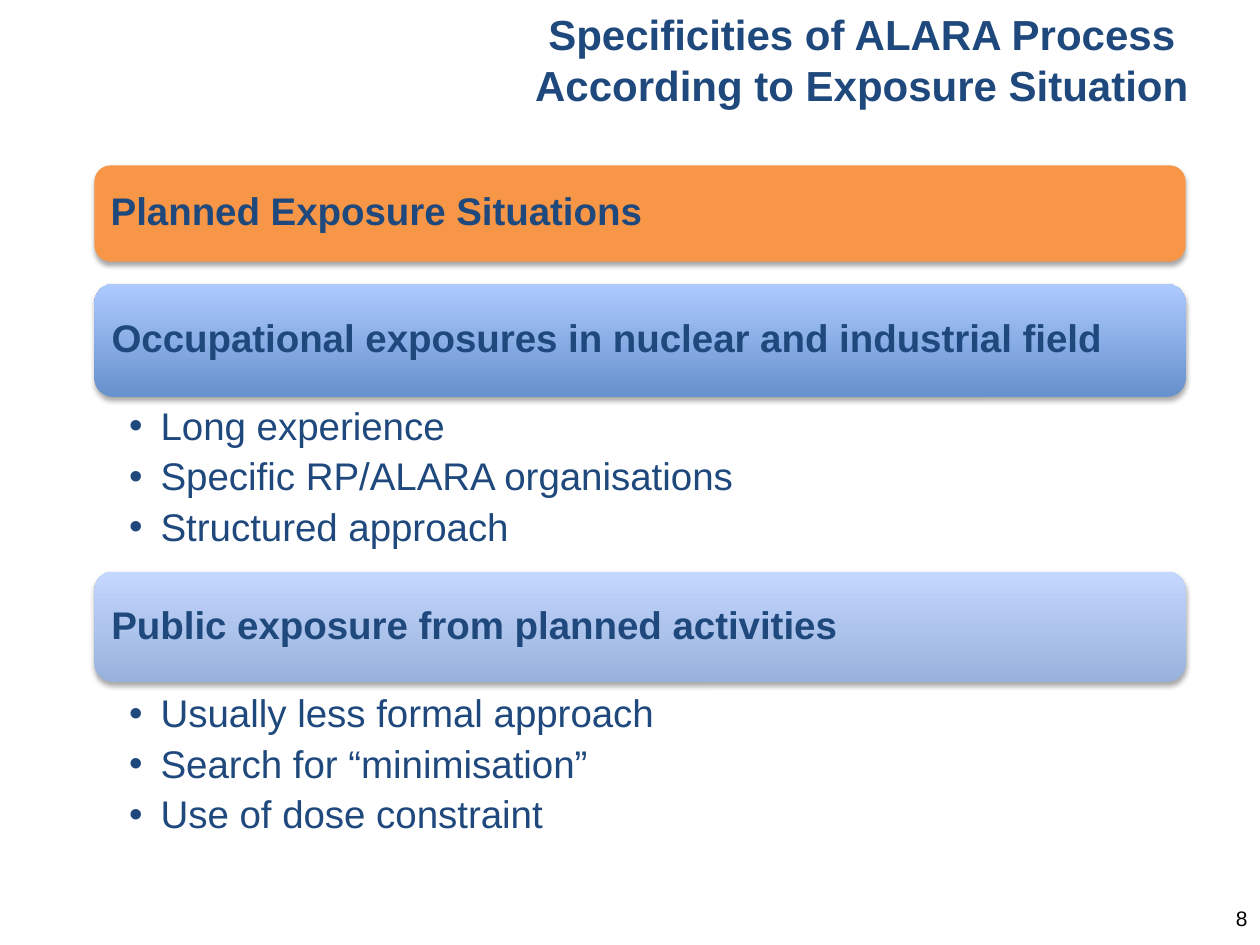
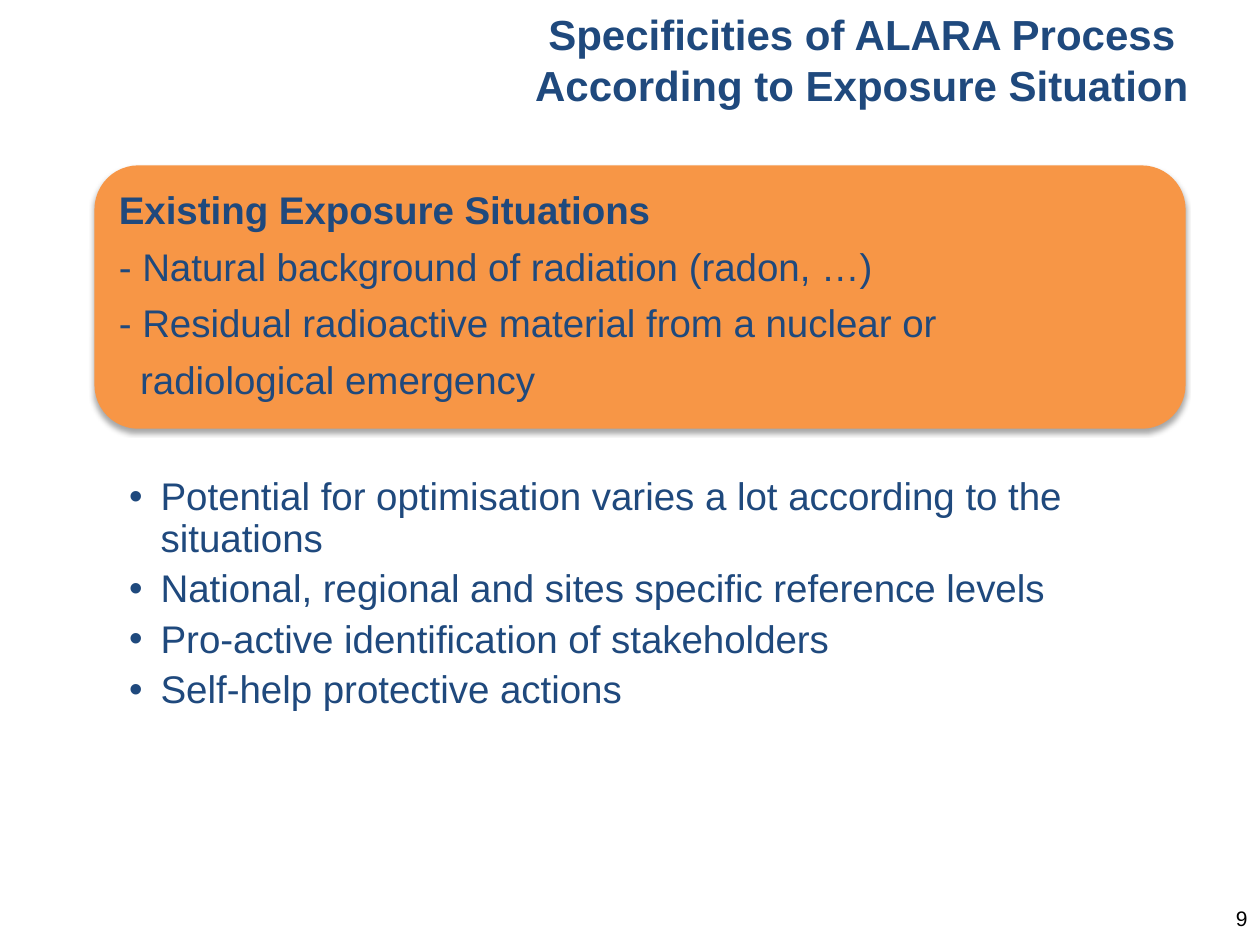
"""Build two slides on the ALARA process in different exposure situations."""
from lxml import etree
from pptx import Presentation
from pptx.dml.color import RGBColor
from pptx.enum import shapes, text
from pptx.oxml import ns
from pptx.util import Pt

NAVY, ORANGE, BLACK = "1F497D", "F79646", "000000"
BLUE, PALE_BLUE = ("6791CD", "ADCAFF"), ("9AB2DB", "C3D7FF")
TITLE = "Specificities of ALARA Process According to Exposure Situation"
LEFT, WIDTH = 54, 623.5
HEADING = dict(bold=True, after=8.6, line=0.9)
DETAIL = dict(after=8.6, line=0.9)
BULLET = dict(after=5.1, line=0.9, indent=18, bullet="•")

color = RGBColor.from_string


def add_text(box, words, size=22, fill=NAVY, bold=False, align="LEFT",
             after=0, line=1.0, indent=0, bullet=None):
    frame = box.text_frame
    para = frame.add_paragraph() if frame.text else frame.paragraphs[0]
    props = para._p.get_or_add_pPr()
    props.set("marL", str(Pt(indent)))
    if bullet:
        props.set("indent", str(-Pt(indent)))
        etree.SubElement(props, ns.qn("a:buFont")).set("typeface", "Arial")
        etree.SubElement(props, ns.qn("a:buChar")).set("char", bullet)
    para.alignment = getattr(text.PP_ALIGN, align)
    para.line_spacing = line
    para.space_after = Pt(after)
    span = para.add_run()
    span.text = words
    span.font.name = "Arial"
    span.font.size = Pt(size)
    span.font.bold = bold
    span.font.color.rgb = color(fill)


def set_frame(box, anchor, left, top, right, bottom):
    frame = box.text_frame
    frame.word_wrap = True
    frame.vertical_anchor = anchor
    frame.margin_left, frame.margin_top = Pt(left), Pt(top)
    frame.margin_right, frame.margin_bottom = Pt(right), Pt(bottom)


PAGES = {
    8: dict(
        bands=[
            (94.5, 55, ORANGE, [("Planned Exposure Situations", HEADING)]),
            (162.3, 64.5, BLUE,
             [("Occupational exposures in nuclear and industrial field", HEADING)]),
            (326.7, 63, PALE_BLUE,
             [("Public exposure from planned activities", HEADING)]),
        ],
        lists=[
            (230.4, 87, ["Long experience", "Specific RP/ALARA organisations",
                         "Structured approach"]),
            (394.6, 87, ["Usually less formal approach", "Search for “minimisation”",
                         "Use of dose constraint"]),
        ],
    ),
    9: dict(
        bands=[
            (94.5, 150.5, ORANGE, [
                ("Existing Exposure Situations", HEADING),
                ("- Natural background of radiation (radon, …)", DETAIL),
                ("- Residual radioactive material from a nuclear or", DETAIL),
                ("radiological emergency", DETAIL | dict(indent=12.2)),
            ]),
        ],
        lists=[
            (270.7, 223, [
                "Potential for optimisation varies a lot according to the situations",
                "National, regional and sites specific reference levels",
                "Pro-active identification of stakeholders",
                "Self-help protective actions",
            ]),
        ],
    ),
}

deck = Presentation()
deck.slide_width, deck.slide_height = Pt(720), Pt(540)

for number, content in PAGES.items():
    page = deck.slides.add_slide(deck.slide_layouts[6])

    footer = page.shapes.add_textbox(Pt(683.3), Pt(514), Pt(36.7), Pt(24.5))
    set_frame(footer, text.MSO_ANCHOR.TOP, 7.2, 3.6, 7.2, 3.6)
    add_text(footer, str(number), size=12, fill=BLACK, align="RIGHT")

    title = page.shapes.add_textbox(Pt(267), Pt(0), Pt(451), Pt(67.7))
    set_frame(title, text.MSO_ANCHOR.MIDDLE, 7.2, 3.6, 7.2, 3.6)
    add_text(title, TITLE, size=24, bold=True, align="CENTER")

    for top, height, fill, lines in content["bands"]:
        band = page.shapes.add_shape(shapes.MSO_SHAPE.ROUNDED_RECTANGLE,
                                     Pt(LEFT), Pt(top), Pt(WIDTH), Pt(height))
        if fill == ORANGE:
            band.fill.solid()
            band.fill.fore_color.rgb = color(fill)
        else:
            band.fill.gradient()
            band.fill.gradient_angle = 90
            for stop, shade in zip(band.fill.gradient_stops, fill):
                stop.color.rgb = color(shade)
        band.line.fill.background()
        band.shadow.inherit = False
        effects = band._element.spPr.find(ns.qn("a:effectLst"))
        shadow = etree.SubElement(effects, ns.qn("a:outerShdw"), blurRad=str(Pt(3.1)),
                                  dist=str(Pt(1.8)), dir="5400000", rotWithShape="0")
        tint = etree.SubElement(shadow, ns.qn("a:srgbClr"), val=BLACK)
        etree.SubElement(tint, ns.qn("a:alpha"), val="35000")
        set_frame(band, text.MSO_ANCHOR.MIDDLE, 6.6, 6.6, 6.6, 6.6)
        for words, style in lines:
            add_text(band, words, **style)

    for top, height, points in content["lists"]:
        box = page.shapes.add_textbox(Pt(LEFT), Pt(top), Pt(WIDTH), Pt(height))
        set_frame(box, text.MSO_ANCHOR.TOP, 19.8, 2.2, 12.3, 2.2)
        for point in points:
            add_text(box, point, **BULLET)

deck.save("out.pptx")
